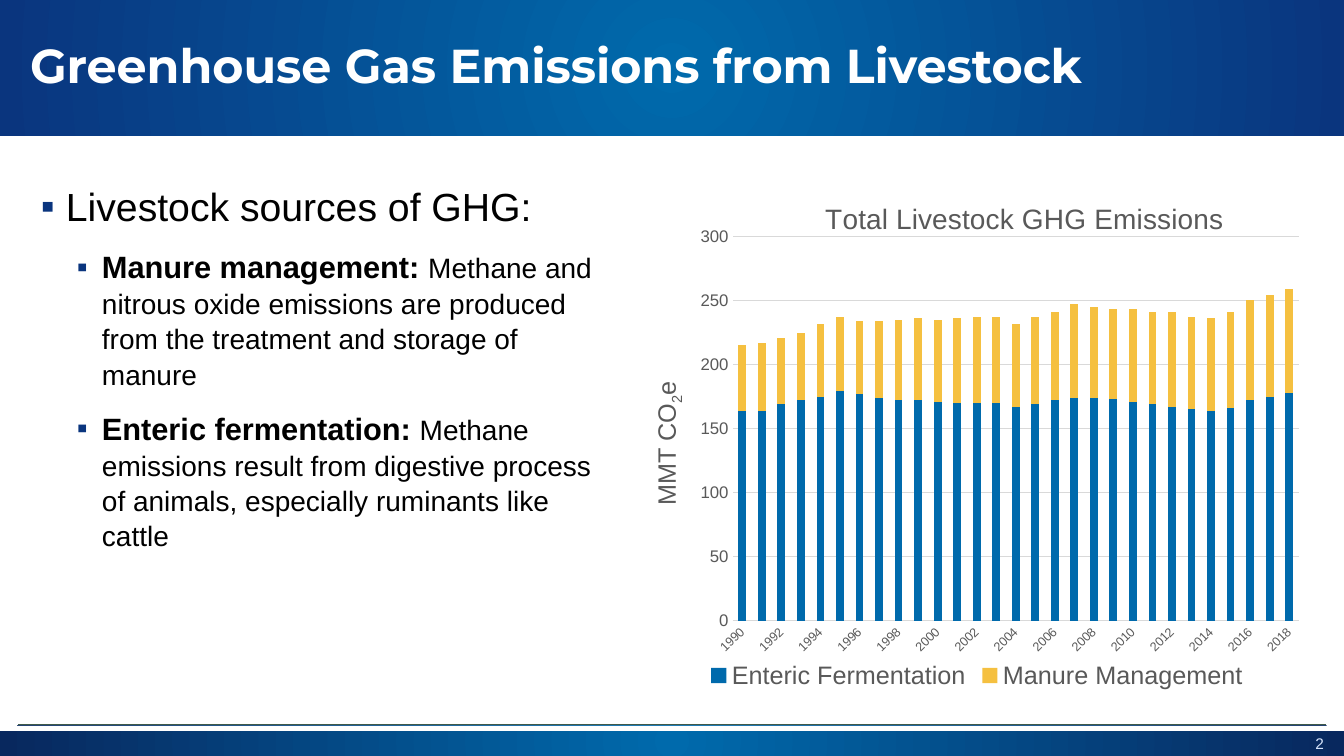
from dataclasses import dataclass

from lxml import etree
from pptx import Presentation
from pptx.chart.data import CategoryChartData
from pptx.dml.color import RGBColor
from pptx.enum.chart import XL_CHART_TYPE, XL_LEGEND_POSITION, XL_TICK_MARK
from pptx.enum.shapes import MSO_CONNECTOR, MSO_SHAPE
from pptx.enum.text import MSO_ANCHOR, PP_ALIGN
from pptx.oxml import parse_xml
from pptx.oxml.ns import nsdecls, qn
from pptx.util import Emu, Pt

STACKED = XL_CHART_TYPE.COLUMN_STACKED
LEGEND_BOTTOM = XL_LEGEND_POSITION.BOTTOM
NO_TICK = XL_TICK_MARK.NONE
STRAIGHT = MSO_CONNECTOR.STRAIGHT
RECTANGLE = MSO_SHAPE.RECTANGLE
MIDDLE, TOP = MSO_ANCHOR.MIDDLE, MSO_ANCHOR.TOP
LEFT, RIGHT = PP_ALIGN.LEFT, PP_ALIGN.RIGHT
EMU_PER_PX = 914400 / 100.8


@dataclass(frozen=True)
class Theme:
    body_font: str = "Arial"
    title_font: str = "Montserrat"
    white: str = "FFFFFF"
    black: str = "000000"
    grey: str = "595959"
    grid: str = "D9D9D9"
    blue: str = "006AAC"
    navy: str = "0A357E"
    deep_navy: str = "08285E"
    yellow: str = "F5C040"
    pale_blue: str = "D5E3FB"
    rule: str = "3F5A4A"
    title_size: int = 34
    topic_size: int = 28
    lead_size: int = 22
    detail_size: int = 20
    number_size: int = 11
    chart_title_size: int = 20
    legend_size: int = 18
    value_size: int = 12
    year_size: int = 9


THEME = Theme()

YEARS = [str(year) for year in range(1990, 2019)]
EMISSIONS = [
    ("Enteric Fermentation", THEME.blue,
     [164, 164, 169, 172, 175, 179, 177, 174, 172, 172, 171, 170, 170, 170, 167,
      169, 172, 174, 174, 173, 171, 169, 167, 165, 164, 166, 172, 175, 178]),
    ("Manure Management", THEME.yellow,
     [51, 53, 52, 53, 57, 58, 57, 60, 63, 64, 64, 66, 67, 67, 65,
      68, 69, 73, 71, 70, 72, 72, 74, 72, 72, 75, 78, 79, 81]),
]
SOURCES = [
    ("Manure management: ",
     "Methane and nitrous oxide emissions are produced from the treatment and storage of manure"),
    ("Enteric fermentation: ",
     "Methane emissions result from digestive process of animals, especially ruminants like cattle"),
]


def px(length):
    return Emu(round(length * EMU_PER_PX))


def rgb(color):
    return RGBColor.from_string(color)


def style_font(font, size, color, bold=False, name=THEME.body_font):
    font.name, font.size, font.bold = name, Pt(size), bold
    font.color.rgb = rgb(color)


def add_span(para, text, size, color, bold=False, name=THEME.body_font):
    span = para.add_run()
    span.text = text
    style_font(span.font, size, color, bold, name)
    return span


def add_band(page, left, top, width, height, color, edge_color=None):
    band = page.shapes.add_shape(RECTANGLE, px(left), px(top), px(width), px(height))
    band.shadow.inherit = False
    band.line.fill.background()
    if edge_color is None:
        band.fill.solid()
        band.fill.fore_color.rgb = rgb(color)
        return band
    band.fill.gradient()
    for stop, stop_color, position in zip(band.fill.gradient_stops, (color, edge_color), (0, 1)):
        stop.color.rgb = rgb(stop_color)
        stop.position = position
    direction = band.fill._xPr.find(qn("a:gradFill")).find(qn("a:lin"))
    direction.getparent().replace(direction, parse_xml(
        f'<a:path {nsdecls("a")} path="circle">'
        '<a:fillToRect l="50000" t="50000" r="50000" b="50000"/></a:path>'))
    return band


def add_rule(page, left, right, y, color):
    rule = page.shapes.add_connector(STRAIGHT, px(left), px(y), px(right), px(y))
    rule.line.color.rgb = rgb(color)
    rule.line.width = Pt(0.75)
    etree.SubElement(rule._element.spPr, qn("a:effectLst"))


def set_frame(frame, anchor, left=10, right=10):
    frame.word_wrap = True
    frame.vertical_anchor = anchor
    frame.margin_left, frame.margin_right = px(left), px(right)
    frame.margin_top = frame.margin_bottom = px(5)
    return frame


def add_text_box(page, left, top, width, height, anchor, right=10):
    box = page.shapes.add_textbox(px(left), px(top), px(width), px(height))
    return set_frame(box.text_frame, anchor, right=right)


def set_bullet(para, level, indent):
    para.level = level
    para.space_before = Pt(12)
    para.line_spacing = 1.05
    properties = para._p.get_or_add_pPr()
    properties.set("marL", str(px(indent)))
    properties.set("indent", str(px(-25)))
    color = etree.SubElement(properties, qn("a:buClr"))
    etree.SubElement(color, qn("a:srgbClr"), val=THEME.navy)
    etree.SubElement(properties, qn("a:buFont"), typeface=THEME.body_font)
    etree.SubElement(properties, qn("a:buChar"), char="▪")


def add_sources(page):
    frame = add_text_box(page, 26, 175, 601, 458, TOP)
    para = frame.paragraphs[0]
    set_bullet(para, 0, 30)
    add_span(para, "Livestock sources of GHG:", THEME.topic_size, THEME.black)
    for lead, detail in SOURCES:
        para = frame.add_paragraph()
        set_bullet(para, 1, 66)
        add_span(para, lead, THEME.lead_size, THEME.black, bold=True)
        add_span(para, detail, THEME.detail_size, THEME.black)


def place(part, x, y, width=None, height=None):
    for old in part.findall(qn("c:layout")):
        part.remove(old)
    settings = [("xMode", "edge"), ("yMode", "edge"), ("x", x), ("y", y)]
    if width:
        settings.insert(0, ("layoutTarget", "inner"))
        settings += [("w", width), ("h", height)]
    inside = "".join(f'<c:{tag} val="{value}"/>' for tag, value in settings)
    layout = parse_xml(f'<c:layout {nsdecls("c")}><c:manualLayout>{inside}</c:manualLayout></c:layout>')
    before = part.find(qn("c:tx"))
    if before is None:
        before = part.find(qn("c:legendPos"))
    if before is None:
        part.insert(0, layout)
    else:
        before.addnext(layout)


def style_axes(chart):
    years, values = chart.category_axis, chart.value_axis
    for axis, size in ((years, THEME.year_size), (values, THEME.value_size)):
        axis.major_tick_mark = axis.minor_tick_mark = NO_TICK
        style_font(axis.tick_labels.font, size, THEME.grey)
    values.minimum_scale, values.maximum_scale, values.major_unit = 0, 300, 50
    values.format.line.fill.background()
    for line in (years.format.line, values.major_gridlines.format.line):
        line.color.rgb = rgb(THEME.grid)
        line.width = Pt(0.75)
    years._element.txPr.find(qn("a:bodyPr")).set("rot", "-2700000")
    skip = parse_xml(f'<c:tickLblSkip {nsdecls("c")} val="2"/>')
    years._element.find(qn("c:noMultiLvlLbl")).addprevious(skip)

    para = values.axis_title.text_frame.paragraphs[0]
    for text, baseline in (("MMT CO", 0), ("2", -25000), ("e", 0)):
        span = add_span(para, text, THEME.legend_size, THEME.grey)
        span.font._element.set("baseline", str(baseline))
    body = values.axis_title.text_frame._txBody.find(qn("a:bodyPr"))
    body.set("rot", "-5400000")
    body.set("vert", "horz")
    place(values.axis_title._element, 0.03, 0.39)


def add_emissions_chart(page):
    data = CategoryChartData()
    data.categories = YEARS
    for name, _, amounts in EMISSIONS:
        data.add_series(name, amounts)
    chart = page.shapes.add_chart(STACKED, px(627), px(175), px(690), px(521), data).chart
    style_font(chart.font, 10, THEME.black)
    plot = chart.plots[0]
    plot.gap_width, plot.overlap, plot.vary_by_categories = 150, 100, False
    for series, (_, color, _) in zip(plot.series, EMISSIONS):
        series.format.fill.solid()
        series.format.fill.fore_color.rgb = rgb(color)
    style_axes(chart)
    chart.has_title = True
    add_span(chart.chart_title.text_frame.paragraphs[0], "Total Livestock GHG Emissions",
             THEME.chart_title_size, THEME.grey)
    chart.chart_title.include_in_layout = False
    place(chart.chart_title._element, 0.28, 0.04)
    chart.has_legend = True
    chart.legend.position = LEGEND_BOTTOM
    chart.legend.include_in_layout = False
    style_font(chart.legend.font, THEME.legend_size, THEME.grey)
    place(chart.legend._element, 0.11, 0.93)
    place(chart._chartSpace.chart.plotArea, 0.153, 0.118, 0.821, 0.738)


def main():
    deck = Presentation()
    deck.slide_width, deck.slide_height = px(1344), px(756)
    page = deck.slides.add_slide(deck.slide_layouts[6])
    add_band(page, 0, 726, 1344, 30, THEME.blue, THEME.deep_navy)
    add_band(page, 0, 726, 1344, 5, THEME.white)
    add_rule(page, 18, 1326, 725, THEME.rule)
    header = add_band(page, 0, 0, 1344, 136, THEME.blue, THEME.navy)
    title = set_frame(header.text_frame, MIDDLE, 30, 30).paragraphs[0]
    title.alignment, title.line_spacing = LEFT, 0.9
    add_span(title, "Greenhouse Gas Emissions from Livestock", THEME.title_size,
             THEME.white, bold=True, name=THEME.title_font)
    number = add_text_box(page, 1273, 729, 71, 29, MIDDLE, right=20).paragraphs[0]
    number.alignment = RIGHT
    add_span(number, "2", THEME.number_size, THEME.pale_blue)
    add_sources(page)
    add_emissions_chart(page)
    deck.save("out.pptx")


if __name__ == "__main__":
    main()
